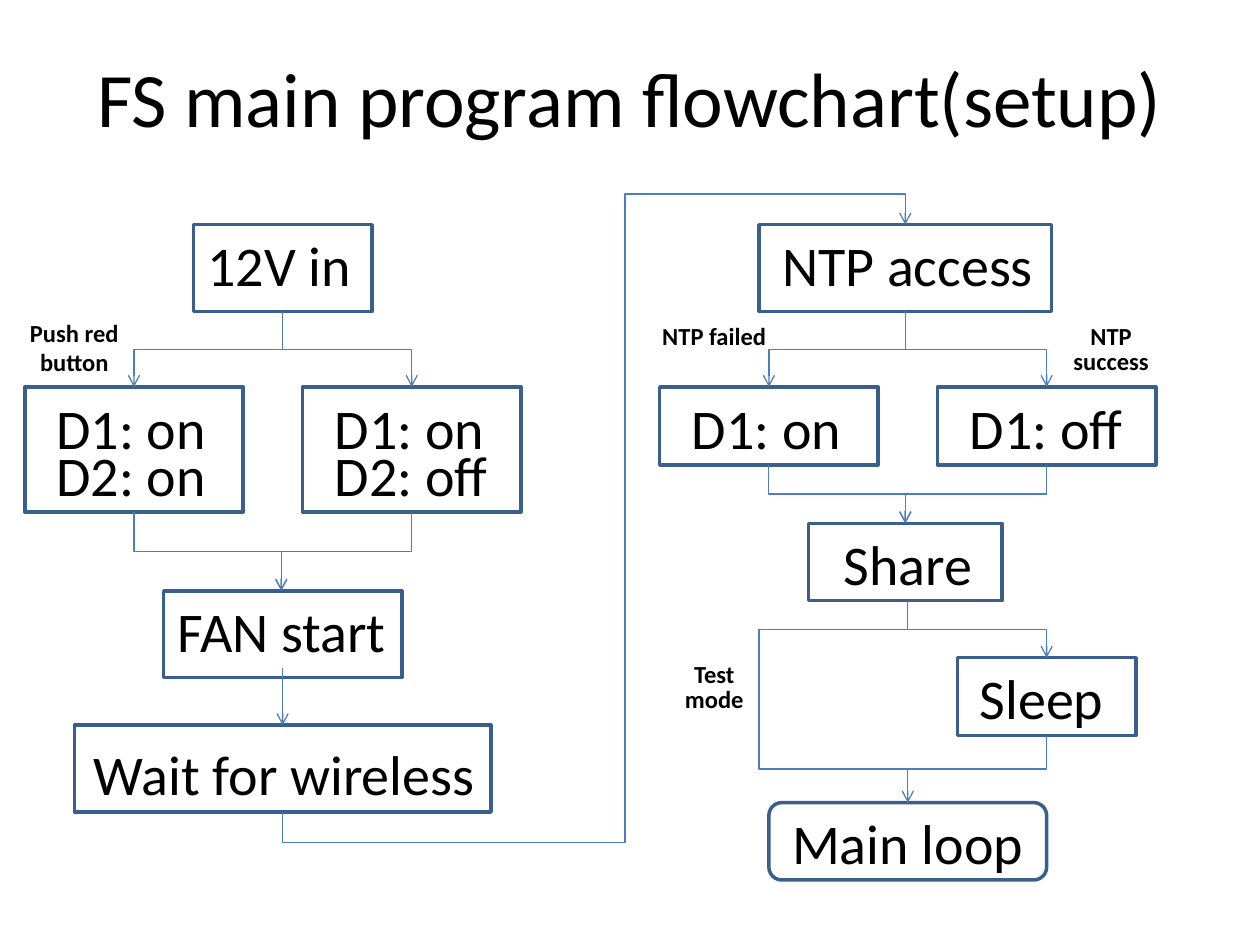
from dataclasses import dataclass
from typing import Any

from lxml import etree
from pptx import Presentation
from pptx.dml.color import RGBColor
from pptx.enum.shapes import MSO_CONNECTOR, MSO_SHAPE
from pptx.enum.text import MSO_ANCHOR, MSO_AUTO_SIZE, PP_ALIGN
from pptx.oxml.ns import qn
from pptx.util import Cm, Pt

PROCESS = MSO_SHAPE.FLOWCHART_PROCESS
ROUNDED = MSO_SHAPE.FLOWCHART_ALTERNATE_PROCESS
ELBOW, STRAIGHT = MSO_CONNECTOR.ELBOW, MSO_CONNECTOR.STRAIGHT
LEFT, CENTER = PP_ALIGN.LEFT, PP_ALIGN.CENTER
TOP, MIDDLE = MSO_ANCHOR.TOP, MSO_ANCHOR.MIDDLE
GROW, FIXED = MSO_AUTO_SIZE.SHAPE_TO_FIT_TEXT, MSO_AUTO_SIZE.NONE

COLORS = {"text": "000000", "box": "3A5F8C", "link": "4B7EBC"}

TITLE = {"name": "Calibri", "size": Pt(44)}
STEP = {"name": "Calibri", "size": Pt(32)}
NOTE = {"name": "Calibri", "size": Pt(14), "bold": True}
TIGHT = {"line_spacing": Pt(14)}


@dataclass
class Box:
    x: float
    y: float
    w: float
    h: float
    kind: Any = PROCESS


@dataclass
class Caption:
    text: str
    x: float
    y: float
    w: float
    h: float = 1.57
    align: Any = CENTER
    inset: float = 0.25


@dataclass
class Link:
    x1: float
    y1: float
    x2: float
    y2: float
    arrow: bool = True


def apply(target: Any, formats: dict) -> None:
    for name, value in formats.items():
        setattr(target, name, value)


def rgb(name: str) -> RGBColor:
    return RGBColor.from_string(COLORS[name])


def draw_box(s: Any, box: Box) -> None:
    sp = s.shapes.add_shape(box.kind, Cm(box.x), Cm(box.y), Cm(box.w), Cm(box.h))
    sp.shadow.inherit = False
    sp.fill.background()
    sp.line.color.rgb = rgb("box")
    sp.line.width = Pt(2)


def draw_caption(s: Any, c: Caption, font: dict, para: dict, frame: dict) -> None:
    sp = s.shapes.add_textbox(Cm(c.x), Cm(c.y), Cm(c.w), Cm(c.h))
    tf = sp.text_frame
    apply(tf, {"word_wrap": True, "margin_left": Cm(c.inset), "margin_right": Cm(c.inset)} | frame)
    p = tf.paragraphs[0]
    apply(p, {"alignment": c.align} | para)
    r = p.add_run()
    r.text = c.text
    apply(r.font, font)
    r.font.color.rgb = rgb("text")


def finish_line(cxn: Any, arrow: bool) -> None:
    cxn.line.color.rgb = rgb("link")
    cxn.line.width = Pt(0.75)
    props = cxn._element.spPr
    if arrow:
        etree.SubElement(props.find(qn("a:ln")), qn("a:tailEnd"), type="arrow")
    etree.SubElement(props, qn("a:effectLst"))


def draw_elbow(s: Any, link: Link, bends: tuple = ()) -> None:
    dx, dy = link.x2 - link.x1, link.y2 - link.y1
    w, h = abs(dy), abs(dx)
    left = (link.x1 + link.x2 - w) / 2
    top = (link.y1 + link.y2 - h) / 2
    cxn = s.shapes.add_connector(ELBOW, Cm(left), Cm(top), Cm(left + w), Cm(top + h))
    xfrm = cxn._element.spPr.find(qn("a:xfrm"))
    xfrm.set("rot", "5400000" if dx < 0 or dy < 0 else "16200000")
    if dx >= 0:
        xfrm.set("flipH", "1")
    if dy < 0:
        xfrm.set("flipV", "1")
    if bends:
        geom = cxn._element.spPr.find(qn("a:prstGeom"))
        geom.set("prst", "bentConnector5")
        guides = geom.find(qn("a:avLst"))
        for i, bend in enumerate(bends, 1):
            etree.SubElement(guides, qn("a:gd"), name=f"adj{i}", fmla=f"val {bend}")
    finish_line(cxn, link.arrow)


def draw_straight(s: Any, link: Link) -> None:
    cxn = s.shapes.add_connector(STRAIGHT, Cm(link.x1), Cm(link.y1), Cm(link.x2), Cm(link.y2))
    finish_line(cxn, link.arrow)


BOXES = [
    Box(3.9, 4.53, 3.6, 1.75),
    Box(0.5, 7.8, 4.4, 2.52),
    Box(6.1, 7.8, 4.4, 2.52),
    Box(3.3, 11.91, 4.8, 1.75),
    Box(1.5, 14.62, 8.4, 1.75),
    Box(15.3, 4.53, 5.9, 1.75),
    Box(13.3, 7.8, 4.4, 1.57),
    Box(18.9, 7.8, 4.4, 1.57),
    Box(16.3, 10.55, 3.9, 1.56),
    Box(19.3, 13.26, 3.6, 1.57),
    Box(15.5, 16.18, 5.6, 1.56, ROUNDED),
]

STEPS = [
    Caption("12V in", 3.56, 4.53, 4.14),
    Caption("D1: on", 0.89, 7.8, 5.59, align=LEFT),
    Caption("D2: on", 0.89, 8.76, 5.59, align=LEFT),
    Caption("D1: on", 6.5, 7.8, 5.59, align=LEFT),
    Caption("D2: off", 6.5, 8.76, 5.59, align=LEFT),
    Caption("FAN start", 3.1, 11.91, 5.16),
    Caption("Wait for wireless", 1.55, 14.78, 8.36),
    Caption("NTP access", 15.3, 4.53, 6),
    Caption("D1: on", 13.7, 7.8, 5.59, align=LEFT),
    Caption("D1: off", 19.3, 7.8, 5.59, align=LEFT),
    Caption("Share", 15.3, 10.55, 6),
    Caption("Sleep", 19.5, 13.26, 4, align=LEFT),
    Caption("Main loop", 15.3, 16.18, 6),
]

NOTES = [
    Caption("NTP failed", 13.1, 6.45, 2.6, 1.27, inset=0.15),
    Caption("NTP success", 21.1, 6.45, 2.6, 1.27),
    Caption("Test mode", 13.1, 13.26, 2.6, 1.27, inset=0.3),
]

ELBOWS = [
    Link(5.7, 6.28, 2.7, 7.8),
    Link(5.7, 6.28, 8.3, 7.8),
    Link(2.7, 10.33, 5.67, 11.91),
    Link(8.3, 10.33, 5.67, 11.91),
    Link(5.7, 13.46, 5.7, 14.62),
    Link(18.25, 6.28, 15.5, 7.8),
    Link(18.25, 6.28, 21.1, 7.8),
    Link(15.5, 9.37, 18.25, 10.55),
    Link(21.1, 9.37, 18.25, 10.55),
    Link(18.3, 12.12, 21.1, 13.26),
    Link(21.1, 14.83, 18.3, 16.18),
    Link(18.3, 12.12, 15.3, 13.26, arrow=False),
    Link(15.3, 14.83, 18.3, 16.18, arrow=False),
]


def main() -> None:
    prs = Presentation()
    apply(prs, {"slide_width": Cm(25.4), "slide_height": Cm(19.05)})
    s = prs.slides.add_slide(prs.slide_layouts[6])
    grow = {"auto_size": GROW, "vertical_anchor": TOP}
    fixed = {"auto_size": FIXED, "vertical_anchor": MIDDLE}

    title = Caption("FS main program flowchart(setup)", 0, 0.36, 25.4, 3.18)
    draw_caption(s, title, TITLE, {}, fixed)
    for box in BOXES:
        draw_box(s, box)
    for step in STEPS:
        draw_caption(s, step, STEP, {}, grow)
    for link in ELBOWS:
        draw_elbow(s, link)
    draw_elbow(s, Link(5.7, 16.37, 18.25, 4.53), (-5200, 55000, 105200))
    draw_straight(s, Link(15.3, 13.26, 15.3, 14.83, arrow=False))
    draw_caption(s, Caption("Push red button", 0.1, 6.28, 2.8, 1.45), NOTE, {}, grow)
    for note in NOTES:
        draw_caption(s, note, NOTE, TIGHT, grow)
    prs.save("out.pptx")


if __name__ == "__main__":
    main()
